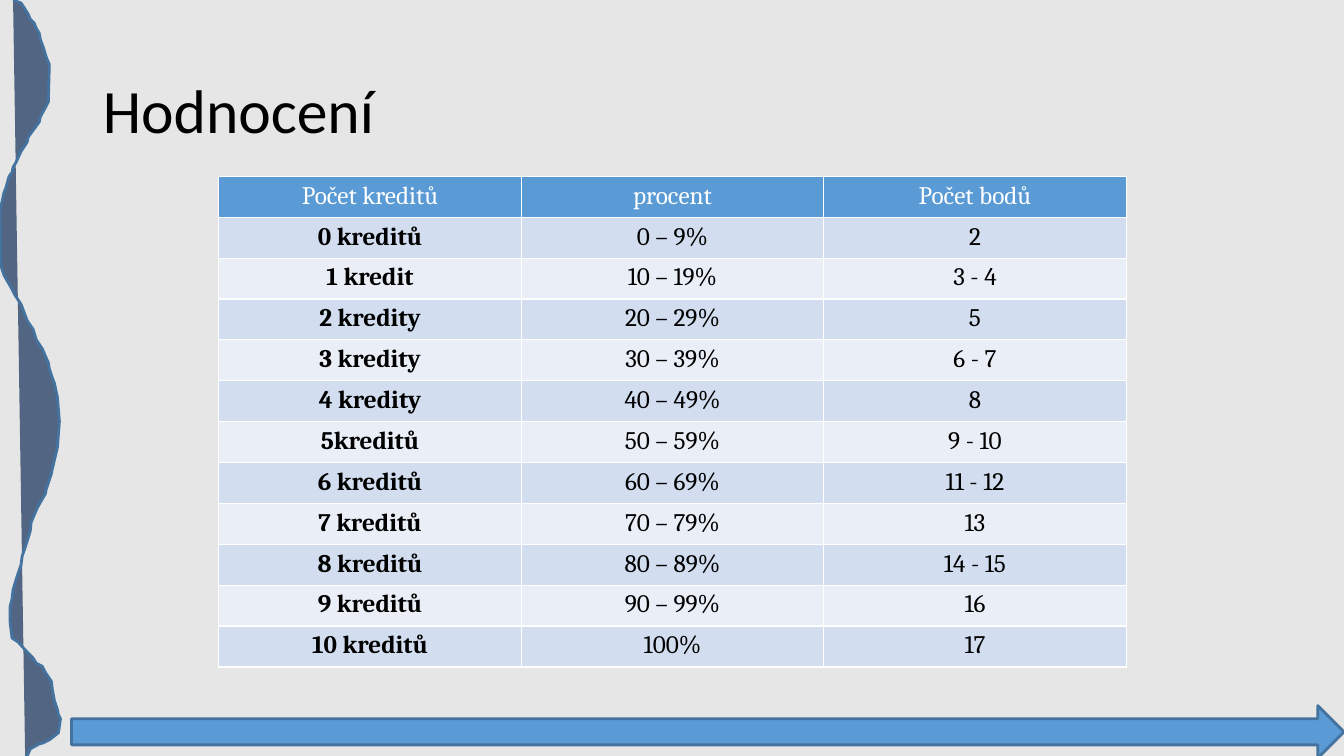
import pptx
import pptx.dml.color
import pptx.enum.shapes
import pptx.enum.text
import pptx.util

Inches, Pt = pptx.util.Inches, pptx.util.Pt
PP_ALIGN = pptx.enum.text.PP_ALIGN
MIDDLE = pptx.enum.text.MSO_ANCHOR.MIDDLE


def colour(hex_value):
    return pptx.dml.color.RGBColor.from_string(hex_value)


def apply_format(target, values):
    for name, value in values.items():
        setattr(target, name, value)


# Content
GRADES = [
    ("Počet kreditů", "procent", "Počet bodů"),
    ("0 kreditů", "0 – 9%", "2"),
    ("1 kredit", "10 – 19%", "3 - 4"),
    ("2 kredity", "20 – 29%", "5"),
    ("3 kredity", "30 – 39%", "6 - 7"),
    ("4 kredity", "40 – 49%", "8"),
    ("5kreditů", "50 – 59%", "9 - 10"),
    ("6 kreditů", "60 – 69%", "11 - 12"),
    ("7 kreditů", "70 – 79%", "13"),
    ("8 kreditů", "80 – 89%", "14 - 15"),
    ("9 kreditů", "90 – 99%", "16"),
    ("10 kreditů", "100%", "17"),
]

# Outline of the wave on the left edge, in hundredths of an inch
WAVE = [
    (13, 0), (21, 3), (28, 14), (30, 19), (34, 23), (36, 28), (39, 33), (40, 39),
    (43, 47), (46, 57), (49, 64), (48, 101), (46, 105), (40, 116), (39, 121),
    (28, 136), (27, 141), (21, 150), (16, 161), (13, 166), (12, 171), (9, 175),
    (6, 186), (4, 191), (1, 205), (0, 211), (1, 264), (4, 273), (12, 287),
    (15, 293), (21, 302), (27, 318), (33, 327), (36, 337), (42, 346), (48, 360),
    (49, 366), (52, 375), (54, 380), (57, 394), (59, 418), (57, 444), (52, 465),
    (51, 470), (46, 485), (45, 490), (42, 495), (37, 504), (31, 518), (30, 527),
    (27, 537), (25, 543), (22, 552), (21, 560), (18, 569), (16, 575), (13, 585),
    (12, 594), (10, 602), (10, 617), (12, 633), (18, 637), (28, 648), (33, 653),
    (36, 658), (42, 661), (45, 667), (51, 676), (52, 684), (54, 695), (57, 704),
    (58, 709), (60, 713), (58, 727), (49, 734), (43, 737), (39, 738), (30, 743),
    (28, 748), (25, 752),
]


class GradingSlide:
    accent, outline, wave_fill = "5B9BD5", "43739E", "526582"
    bands = ("EAEFF7", "D2DEEF")
    title_font = {"name": "Calibri", "size": Pt(44), "bold": False}
    table_font = {"name": "Cambria", "size": Pt(18)}

    def __init__(self, presentation):
        self.slide = presentation.slides.add_slide(presentation.slide_layouts[5])
        self.shapes = self.slide.shapes
        backdrop = self.slide.background.fill
        backdrop.solid()
        backdrop.fore_color.rgb = colour("E7E6E6")

    def paint(self, shape, fill):
        shape.shadow.inherit = False
        shape.fill.solid()
        shape.fill.fore_color.rgb = colour(fill)
        shape.line.color.rgb = colour(self.outline)
        shape.line.width = Pt(2)

    def wave(self, points):
        builder = self.shapes.build_freeform(*points[0], scale=Inches(0.01))
        builder.add_line_segments(points[1:], close=False)
        self.paint(builder.convert_to_shape(), self.wave_fill)

    def arrow(self, *box):
        kind = pptx.enum.shapes.MSO_SHAPE.RIGHT_ARROW
        self.paint(self.shapes.add_shape(kind, *map(Inches, box)), self.accent)

    def title(self, wording, left, top, width, height):
        heading = self.shapes.title
        apply_format(heading, {"left": Inches(left), "top": Inches(top),
                               "width": Inches(width), "height": Inches(height)})
        frame = heading.text_frame
        frame.text = wording
        apply_format(frame, {"vertical_anchor": MIDDLE, "word_wrap": True,
                             "auto_size": pptx.enum.text.MSO_AUTO_SIZE.NONE})
        line = frame.paragraphs[0]
        apply_format(line, {"alignment": PP_ALIGN.LEFT, "line_spacing": 0.9})
        font = line.runs[0].font
        apply_format(font, self.title_font)
        font.color.rgb = colour("000000")

    def table(self, rows, *box):
        frame = self.shapes.add_table(len(rows), len(rows[0]), *map(Inches, box))
        for r, row in enumerate(rows):
            for c, wording in enumerate(row):
                cell = frame.table.cell(r, c)
                cell.fill.solid()
                cell.fill.fore_color.rgb = colour(self.bands[r % 2] if r else self.accent)
                cell.text = wording
                line = cell.text_frame.paragraphs[0]
                line.alignment = PP_ALIGN.CENTER
                font = line.runs[0].font
                apply_format(font, {**self.table_font, "bold": r > 0 and c == 0})
                font.color.rgb = colour("000000" if r else "FFFFFF")


def main():
    presentation = pptx.Presentation()
    apply_format(presentation, {"slide_width": Inches(13.33), "slide_height": Inches(7.5)})
    grading = GradingSlide(presentation)

    # Decoration
    grading.wave(WAVE)
    grading.arrow(0.71, 7, 12.62, 0.52)

    # Heading and grading scale
    grading.title("Hodnocení", 0.92, 0.4, 11.5, 1.45)
    grading.table(GRADES, 2.17, 1.75, 9, 4.87)

    presentation.save("out.pptx")


if __name__ == "__main__":
    main()
